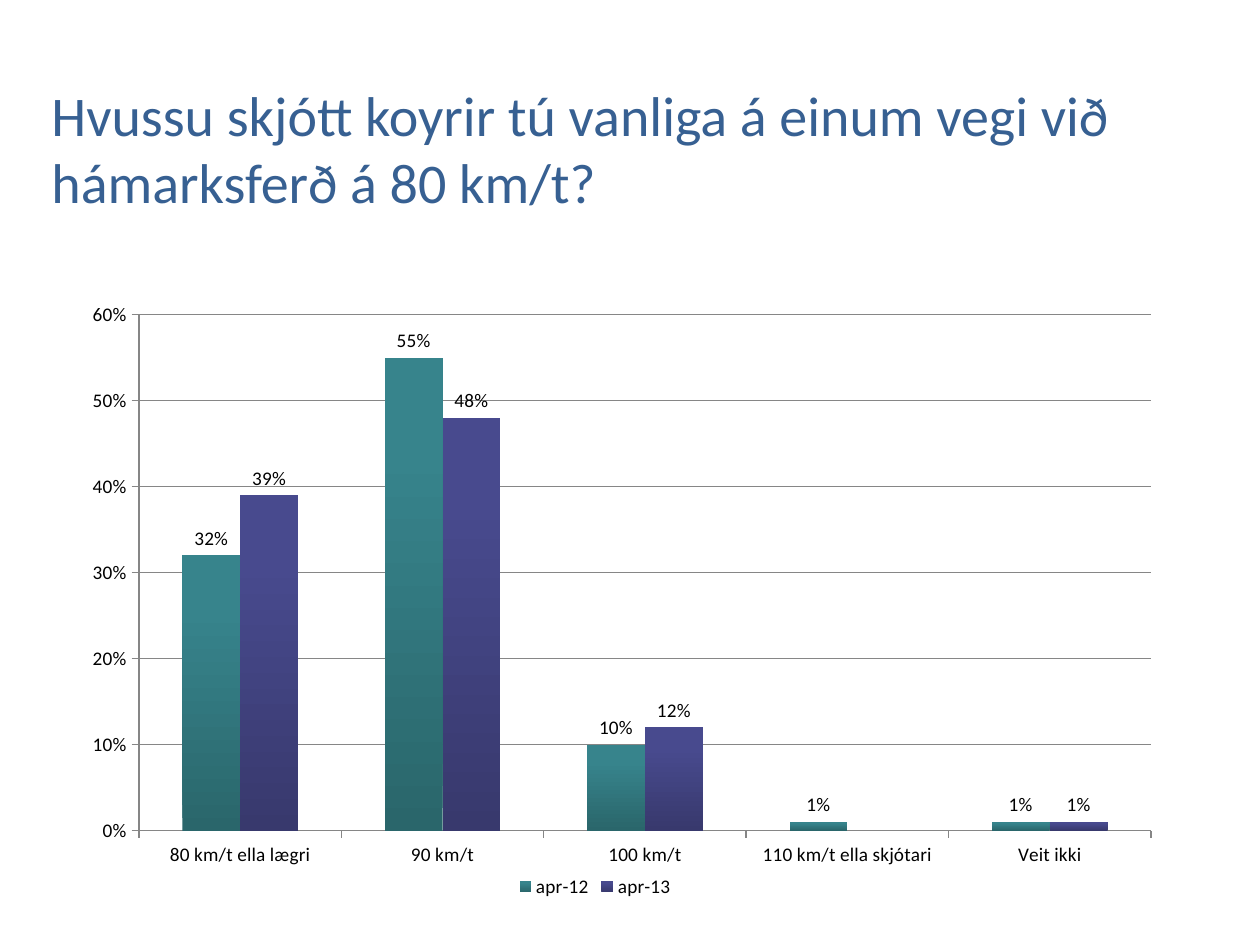
from typing import NamedTuple, Optional

from lxml.etree import SubElement
from pptx import Presentation
from pptx.chart.data import CategoryChartData
from pptx.dml.color import RGBColor
from pptx.enum.chart import (XL_CHART_TYPE, XL_LABEL_POSITION,
                             XL_LEGEND_POSITION, XL_TICK_MARK)
from pptx.enum.text import MSO_ANCHOR
from pptx.oxml import parse_xml
from pptx.oxml.ns import nsdecls, qn
from pptx.util import Emu, Pt

PX = 9144  # 100 px to the inch
FONT = "Calibri"
AXIS_GREY = "868686"


class Series(NamedTuple):
    name: str
    values: tuple[Optional[float], ...]
    stops: tuple[tuple[int, str], ...]  # percent, colour; bottom to top


CATEGORIES = ("80 km/t ella lægri", "90 km/t", "100 km/t",
              "110 km/t ella skjótari", "Veit ikki")
SERIES = (
    Series("apr-12", (0.32, 0.55, 0.10, 0.01, 0.01),
           ((0, "2A666B"), (80, "37848C"), (100, "36868E"))),
    Series("apr-13", (0.39, 0.48, 0.12, None, 0.01),
           ((0, "38396D"), (80, "484A8E"), (100, "474990"))),
)


def px(*lengths: int) -> list[Emu]:
    return [Emu(n * PX) for n in lengths]


def rgb(colour: str) -> RGBColor:
    return RGBColor.from_string(colour)


def style_font(font, size: int, colour: str) -> None:
    font.name, font.size = FONT, Pt(size)
    font.color.rgb = rgb(colour)


def style_line(line) -> None:
    line.color.rgb = rgb(AXIS_GREY)
    line.width = Pt(0.75)


def gradient_fill(sp_pr, stops: tuple[tuple[int, str], ...]) -> None:
    gs = "".join(f'<a:gs pos="{pos * 1000}"><a:srgbClr val="{colour}"/></a:gs>'
                 for pos, colour in stops)
    sp_pr.insert(0, parse_xml(
        f'<a:gradFill {nsdecls("a")} rotWithShape="1"><a:gsLst>{gs}</a:gsLst>'
        '<a:lin ang="16200000" scaled="0"/></a:gradFill>'))


def place_plot(chart, x: float, y: float, w: float, h: float) -> None:
    area = chart._chartSpace.chart.plotArea
    for old in area.findall(qn("c:layout")):
        area.remove(old)
    layout = parse_xml(f'<c:layout {nsdecls("c")}/>')
    manual = SubElement(layout, qn("c:manualLayout"))
    settings = (("layoutTarget", "inner"), ("xMode", "edge"),
                ("yMode", "edge"), ("x", x), ("y", y), ("w", w), ("h", h))
    for tag, value in settings:
        SubElement(manual, qn(f"c:{tag}")).set("val", str(value))
    area.insert(0, layout)


def add_title(s, text: str) -> None:
    tf = s.shapes.add_textbox(*px(31, 42, 883, 150)).text_frame
    tf.word_wrap = True
    tf.vertical_anchor = MSO_ANCHOR.MIDDLE
    tf.text = text
    style_font(tf.paragraphs[0].runs[0].font, 32, "376092")


def add_speed_chart(s) -> None:
    data = CategoryChartData(number_format="0%")
    data.categories = CATEGORIES
    for item in SERIES:
        data.add_series(item.name, item.values)
    chart = s.shapes.add_chart(XL_CHART_TYPE.COLUMN_CLUSTERED,
                               *px(31, 192, 883, 525), data).chart
    style_font(chart.font, 11, "000000")
    chart.has_title = False
    chart.has_legend = True
    chart.legend.position = XL_LEGEND_POSITION.BOTTOM
    chart.legend.include_in_layout = False
    place_plot(chart, 0.09, 0.11, 0.91, 0.78)

    # Axes
    for axis in (chart.category_axis, chart.value_axis):
        axis.major_tick_mark = XL_TICK_MARK.OUTSIDE
        axis.minor_tick_mark = XL_TICK_MARK.NONE
        style_line(axis.format.line)
    axis = chart.value_axis
    axis.minimum_scale, axis.maximum_scale, axis.major_unit = 0, 0.6, 0.1
    axis.has_major_gridlines = True
    style_line(axis.major_gridlines.format.line)
    axis.tick_labels.number_format = "0%"
    axis.tick_labels.number_format_is_linked = False

    # Columns and their labels
    plot = chart.plots[0]
    plot.gap_width, plot.overlap = 150, 0
    plot.vary_by_categories = False
    for series, item in zip(plot.series, SERIES):
        series.invert_if_negative = False
        gradient_fill(series._element.get_or_add_spPr(), item.stops)
        labels = series.data_labels
        labels.show_value = True
        labels.number_format = "0%"
        labels.number_format_is_linked = False
        labels.position = XL_LABEL_POSITION.OUTSIDE_END


def main() -> None:
    prs = Presentation()
    prs.slide_width, prs.slide_height = px(1000, 750)
    s = prs.slides.add_slide(prs.slide_layouts[6])
    add_title(s, "Hvussu skjótt koyrir tú vanliga á einum vegi við "
                 "hámarksferð á 80 km/t?")
    add_speed_chart(s)
    prs.save("out.pptx")


if __name__ == "__main__":
    main()
